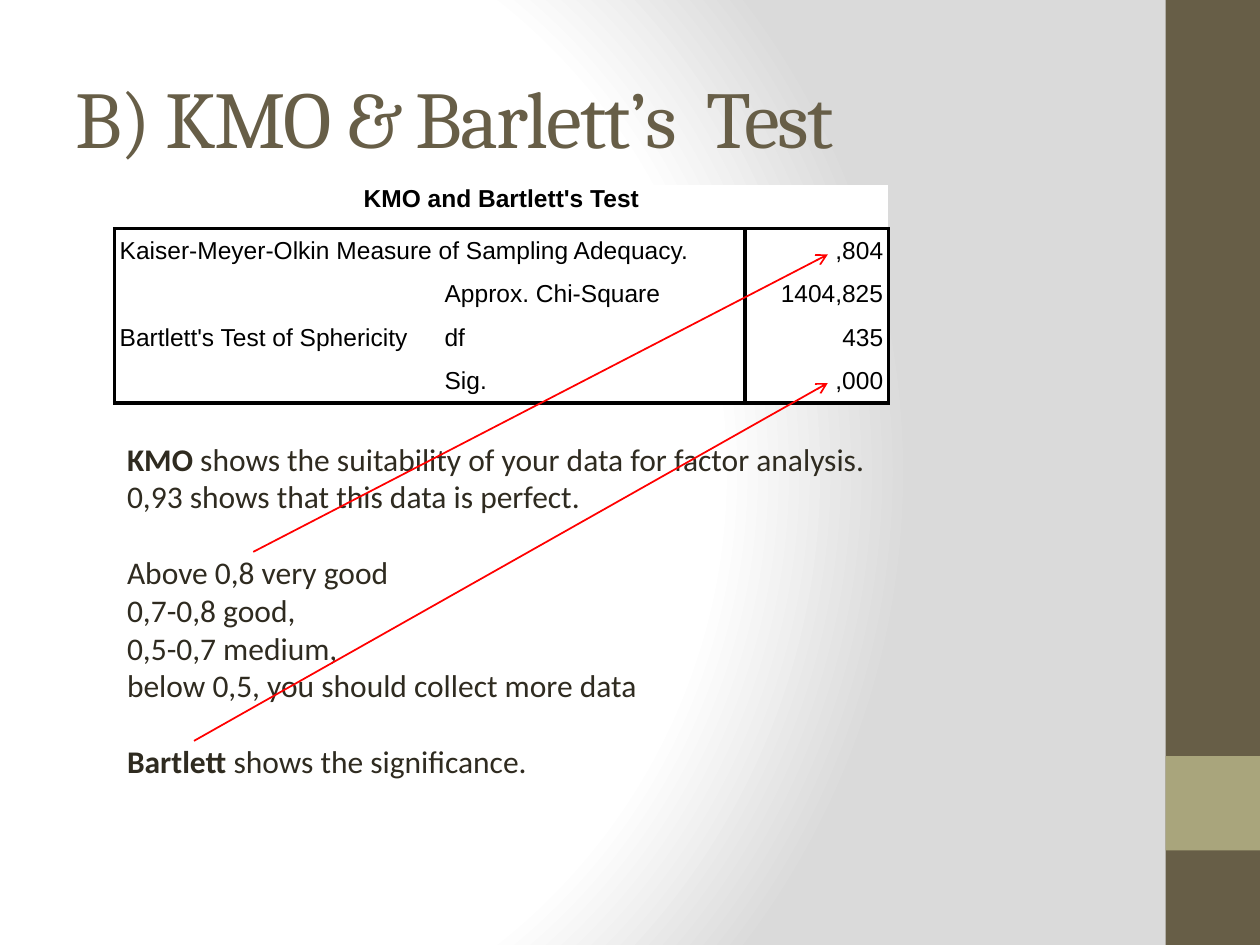
from lxml import etree
from pptx import Presentation
from pptx.dml.color import RGBColor
from pptx.enum.shapes import MSO_CONNECTOR, MSO_SHAPE
from pptx.enum.text import MSO_ANCHOR, PP_ALIGN
from pptx.oxml.ns import qn
from pptx.util import Inches, Pt

STRAIGHT = MSO_CONNECTOR.STRAIGHT
RECTANGLE = MSO_SHAPE.RECTANGLE
MIDDLE, TOP = MSO_ANCHOR.MIDDLE, MSO_ANCHOR.TOP
LEFT, CENTER, RIGHT = PP_ALIGN.LEFT, PP_ALIGN.CENTER, PP_ALIGN.RIGHT

COLUMNS, ROWS = 100, 75
UNIT = Inches(0.1)
COLORS = {
    "white": "FFFFFF", "gray": "DADADA", "brown": "675E47",
    "olive": "A9A57C", "text": "2F2B20", "black": "000000", "red": "FF0000",
}


def grid(*lengths):
    return [round(length * UNIT) for length in lengths]


def rgb(name):
    return RGBColor.from_string(COLORS[name])


def add_node(parent, tag, **attributes):
    return etree.SubElement(parent, qn(tag), attributes)


def add_color(parent, name):
    add_node(add_node(parent, "a:solidFill"), "a:srgbClr", val=COLORS[name])


def style_font(font, name, size, color, bold=None):
    font.name, font.size, font.bold = name, Pt(size), bold
    font.color.rgb = rgb(color)


def paint_background(page):
    page.background.fill.gradient()
    gradient = next(page.element.iter(qn("a:gradFill")))
    for child in list(gradient):
        gradient.remove(child)
    stops = add_node(gradient, "a:gsLst")
    for position, color in ((0, "white"), (75, "white"), (100, "gray")):
        stop = add_node(stops, "a:gs", pos=str(position * 1000))
        add_node(stop, "a:srgbClr", val=COLORS[color])
    circle = add_node(gradient, "a:path", path="circle")
    add_node(circle, "a:fillToRect", l="20000", t="50000", r="100000", b="50000")


def add_side_band(page, left, top, width, height):
    for color, start, share in (("brown", 0, 1), ("olive", 0.8, 0.1)):
        band = page.shapes.add_shape(
            RECTANGLE, *grid(left, top + start * height, width, share * height))
        band.shadow.inherit = False
        band.fill.solid()
        band.fill.fore_color.rgb = rgb(color)
        band.line.fill.background()


def place_title(page, *box):
    title = page.shapes.title
    title.left, title.top, title.width, title.height = grid(*box)
    frame = title.text_frame
    frame.vertical_anchor = MIDDLE
    para = frame.paragraphs[0]
    span = para.add_run()
    span.text = "B) KMO & Barlett’s  Test"
    para.alignment = LEFT
    style_font(para.font, "Cambria", 46, "brown")
    span.font._element.set("spc", "-100")


def draw_borders(cell, row, column):
    right, bottom = column + cell.span_width, row + cell.span_height
    body = row > 0
    properties = cell._tc.get_or_add_tcPr()
    for tag, shown in (
        ("a:lnL", body and column in (0, 2)),
        ("a:lnR", body and right in (2, 3)),
        ("a:lnT", row == 1),
        ("a:lnB", bottom in (1, 5)),
    ):
        line = add_node(properties, tag, w=str(Pt(2.25)))
        if shown:
            add_color(line, "black")
        else:
            add_node(line, "a:noFill")


def fill_cell(cell, text, alignment, anchor, bold):
    cell.margin_left = cell.margin_right = cell.margin_top = cell.margin_bottom = 0
    cell.vertical_anchor = anchor
    cell.fill.solid()
    cell.fill.fore_color.rgb = rgb("white")
    para = cell.text_frame.paragraphs[0]
    para.text = text
    para.alignment, para.line_spacing = alignment, Pt(16)
    for margin in ("marL", "marR"):
        para._p.get_or_add_pPr().set(margin, str(Inches(0.04)))
    style_font(para.font, "Arial", 14, "black", bold)


def add_test_table(page, left, top, width, height):
    texts = [
        ["KMO and Bartlett's Test", "", ""],
        ["Kaiser-Meyer-Olkin Measure of Sampling Adequacy.", "", ",804"],
        ["Bartlett's Test of Sphericity", "Approx. Chi-Square", "1404,825"],
        ["", "df", "435"],
        ["", "Sig.", ",000"],
    ]
    table = page.shapes.add_table(5, 3, *grid(left, top, width, height)).table
    table.first_row = table.horz_banding = False
    for column, share in zip(table.columns, (0.42, 0.395, 0.185)):
        column.width = grid(width * share)[0]
    for first, last in (((0, 0), (0, 2)), ((1, 0), (1, 1)), ((2, 0), (4, 0))):
        table.cell(*first).merge(table.cell(*last))
    for row, entries in enumerate(texts):
        for column, text in enumerate(entries):
            cell = table.cell(row, column)
            draw_borders(cell, row, column)
            heading = row == 0
            alignment = CENTER if heading else RIGHT if column == 2 else LEFT
            fill_cell(cell, text, alignment, TOP if heading else MIDDLE, heading)


def add_explanation(page, *box):
    lines = [
        ("KMO ", "shows the suitability of your data for factor analysis.", 0),
        ("", "0,93 shows that this data is perfect.", 0),
        ("", "Above 0,8 very good", 1),
        ("", "0,7-0,8 good,", 0),
        ("", "0,5-0,7 medium,", 0),
        ("", "below 0,5, you should collect more data", 0),
        ("Bartlett ", "shows the significance.", 1),
    ]
    frame = page.shapes.add_textbox(*grid(*box)).text_frame
    frame.word_wrap = True
    for index, (term, text, gap) in enumerate(lines):
        para = frame.add_paragraph() if index else frame.paragraphs[0]
        if gap:
            para.space_before = Pt(21.6)
        if term:
            span = para.add_run()
            span.text, span.font.bold = term, True
        para.add_run().text = text
        style_font(para.font, "Calibri", 18, "text")


def add_arrow(page, *ends):
    arrow = page.shapes.add_connector(STRAIGHT, *grid(*ends))
    arrow.line.color.rgb = rgb("red")
    arrow.line.width = Pt(1)
    add_node(arrow.line._get_or_add_ln(), "a:tailEnd", type="arrow")
    add_node(arrow._element.spPr, "a:effectLst")


def build_test_page(deck):
    page = deck.slides.add_slide(deck.slide_layouts[5])
    paint_background(page)
    add_side_band(page, 92.5, 0, 7.5, ROWS)
    place_title(page, 5, 3, 83.3, 12.5)
    add_test_table(page, 9.1, 14.7, 61.4, 17.3)
    add_explanation(page, 9.1, 34.4, 63.8, 28.3)
    add_arrow(page, 20.1, 43.8, 65.7, 20.2)
    add_arrow(page, 15.4, 58.8, 65.7, 30.4)


def main():
    deck = Presentation()
    deck.slide_width, deck.slide_height = grid(COLUMNS, ROWS)
    build_test_page(deck)
    deck.save("out.pptx")


if __name__ == "__main__":
    main()
